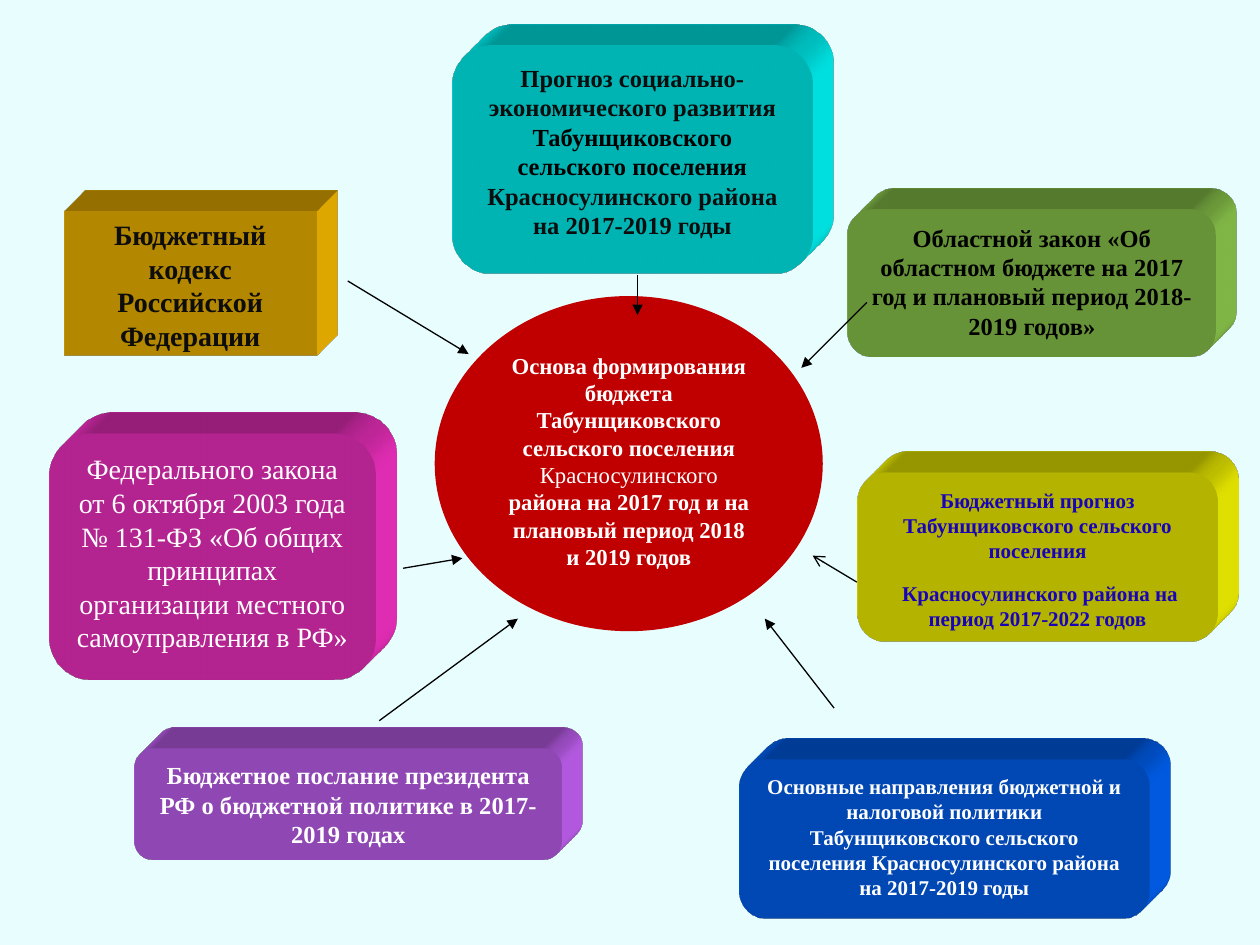
import pptx
import pptx.dml.color
import pptx.enum.shapes
import pptx.enum.text
import pptx.oxml
import pptx.util
from pptx.util import Inches

A = 'xmlns:a="http://schemas.openxmlformats.org/drawingml/2006/main"'
SHAPES = pptx.enum.shapes.MSO_SHAPE


def color(value):
    return pptx.dml.color.RGBColor.from_string(value)


def add_text_shape(kind, place, fill, size, paragraphs, space_after=0):
    shape = page.shapes.add_shape(kind, *[Inches(v) for v in place])
    shape.shadow.inherit = False
    shape.fill.solid()
    shape.fill.fore_color.rgb = color(fill)
    shape.line.fill.background()
    frame = shape.text_frame
    frame.word_wrap = True
    frame.vertical_anchor = pptx.enum.text.MSO_ANCHOR.TOP
    for index, spans in enumerate(paragraphs):
        para = frame.add_paragraph() if index else frame.paragraphs[0]
        para.alignment = pptx.enum.text.PP_ALIGN.CENTER
        para.space_after = pptx.util.Pt(space_after)
        for text, text_color, bold in spans:
            span = para.add_run()
            span.text = text
            formats = {"name": "Times New Roman", "size": pptx.util.Pt(size), "bold": bold}
            for name, value in formats.items():
                setattr(span.font, name, value)
            span.font.color.rgb = color(text_color)
    return shape


deck = pptx.Presentation()
deck.slide_width, deck.slide_height = Inches(10), Inches(7.5)
page = deck.slides.add_slide(deck.slide_layouts[6])
page.background.fill.solid()
page.background.fill.fore_color.rgb = color("E8FDFE")

# Central ellipse
add_text_shape(SHAPES.OVAL, (3.45, 2.35, 3.08, 2.66), "C00000", 13, [[
    ("Основа формирования бюджета Табунщиковского сельского поселения ", "FFFFFF", True),
    ("Красносулинского", "FFFFFF", False),
    (" района на 2017 год и на плановый период 2018 и 2019 годов", "FFFFFF", True),
]])

# Source documents: place, corner rounding, fill, text size, paragraphs of spans
blocks = [
    ((0.51, 1.68, 2, 1.14), 0, "FFC000", 16,
     [[("Бюджетный кодекс Российской Федерации", "0D0D0D", True)]]),
    ((0.39, 3.44, 2.59, 1.95), 0.17, "FF33CC", 16,
     [[("Федерального закона от 6 октября 2003 года № 131-ФЗ «Об общих принципах "
        "организации местного самоуправления в РФ»", "FFFFFF", False)]]),
    ((1.07, 5.94, 3.39, 0.88), 0.17, "CC66FF", 14,
     [[("Бюджетное послание президента РФ о бюджетной политике в 2017-2019 годах",
        "FFFFFF", True)]]),
    ((6.73, 1.66, 2.92, 1.17), 0.17, "92D050", 14,
     [[("Областной закон «Об областном бюджете на 2017 год и плановый период "
        "2018-2019 годов»", "000000", True)]]),
    ((3.59, 0.36, 2.86, 1.81), 0.17, "00FFFF", 14,
     [[("Прогноз социально-экономического развития ", "0D0D0D", True),
       ("Табунщиковского сельского поселения ", "000000", True),
       ("Красносулинского района на 2017-2019 годы", "0D0D0D", True)]]),
    ((6.81, 3.75, 2.85, 1.34), 0.17, "FFFF00", 12,
     [[("Бюджетный прогноз Табунщиковского сельского поселения", "1903B9", True)],
      [(" Красносулинского района на период 2017-2022 годов", "1903B9", True)]]),
    ((5.87, 6.03, 3.25, 1.26), 0.17, "0066FF", 12,
     [[("Основные направления бюджетной и налоговой политики Табунщиковского сельского "
        "поселения Красносулинского района на 2017-2019 годы", "FFFFFF", True)]]),
]
for place, rounding, fill, size, paragraphs in blocks:
    box = add_text_shape(SHAPES.ROUNDED_RECTANGLE, place, fill, size, paragraphs, 10)
    box.adjustments[0] = rounding
    # Extrusion towards the top right
    for xml in (
        f'<a:scene3d {A}><a:camera prst="legacyObliqueTopRight"/>'
        '<a:lightRig rig="legacyFlat3" dir="b"/></a:scene3d>',
        f'<a:sp3d {A} extrusionH="430200" prstMaterial="legacyMatte">'
        f'<a:extrusionClr><a:srgbClr val="{fill}"/></a:extrusionClr></a:sp3d>',
    ):
        box._element.spPr.append(pptx.oxml.parse_xml(xml))

# Arrows towards the ellipse
arrows = [
    (2.76, 2.23, 3.72, 2.81, "triangle"),
    (3.2, 4.51, 3.67, 4.43, "triangle"),
    (3.01, 5.72, 4.11, 4.91, "triangle"),
    (5.06, 2.18, 5.06, 2.5, "triangle"),
    (6.88, 2.4, 6.36, 2.92, "triangle"),
    (6.62, 5.62, 6.07, 4.91, "triangle"),
    (6.8, 4.62, 6.45, 4.41, "arrow"),
]
for *ends, head in arrows:
    arrow = page.shapes.add_connector(
        pptx.enum.shapes.MSO_CONNECTOR.STRAIGHT, *[Inches(v) for v in ends])
    arrow.line.width = pptx.util.Pt(0.75)
    arrow.line.color.rgb = color("000000")
    arrow.line._get_or_add_ln().append(
        pptx.oxml.parse_xml(f'<a:tailEnd {A} type="{head}"/>'))
    arrow._element.spPr.append(pptx.oxml.parse_xml(f"<a:effectLst {A}/>"))

deck.save("out.pptx")
